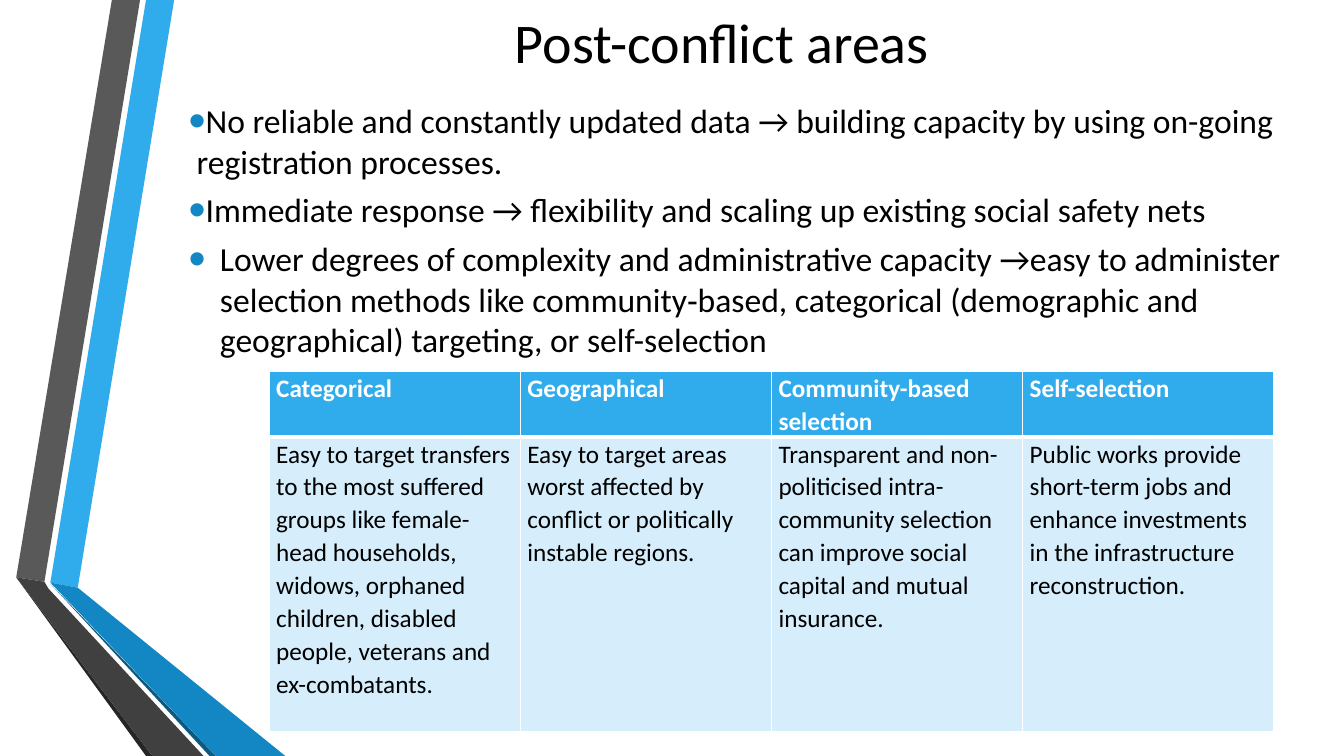
from lxml import etree
from pptx import Presentation
from pptx.dml.color import RGBColor
from pptx.enum.text import MSO_ANCHOR, MSO_AUTO_SIZE, PP_ALIGN
from pptx.oxml.ns import qn
from pptx.util import Cm, Pt

MIDDLE, TOP = MSO_ANCHOR.MIDDLE, MSO_ANCHOR.TOP
NO_AUTOFIT = MSO_AUTO_SIZE.NONE
CENTER = PP_ALIGN.CENTER
FONT = "Calibri"
COLORS = {
    "black": "000000",
    "white": "FFFFFF",
    "sky": "30ACEC",
    "blue": "1287C3",
    "navy": "0C5A82",
    "pale": "D6EEFB",
    "grey": "595959",
    "charcoal": "404040",
    "dark": "262626",
}


def style_text(paragraph, size, color, bold=False):
    for span in paragraph.runs:
        span.font.name = FONT
        span.font.size = Pt(size)
        span.font.bold = bold
        span.font.color.rgb = RGBColor.from_string(COLORS[color])


def add_borders(cell, widths):
    properties = cell._tc.get_or_add_tcPr()
    for position, (side, width) in enumerate(widths.items()):
        line = etree.Element(qn(f"a:{side}"), w=str(Pt(width)))
        fill = etree.SubElement(line, qn("a:solidFill"))
        etree.SubElement(fill, qn("a:srgbClr"), val=COLORS["white"])
        properties.insert(position, line)


deck = Presentation()
deck.slide_width, deck.slide_height = Cm(33.87), Cm(19.05)
page = deck.slides.add_slide(deck.slide_layouts[1])

ribbons = [
    ("sky", [(1.27, 14.68), (1.96, 14.81), (4.39, 0), (3.68, 0)]),
    ("grey", [(3.53, 0), (2.82, 0), (0.41, 14.55), (1.12, 14.66)]),
    ("dark", [(0.41, 14.55), (3.68, 19.05), (3.84, 19.05)]),
    ("navy", [(1.27, 14.71), (5.28, 19.05), (5.44, 19.05)]),
    ("blue", [(1.27, 14.68), (5.44, 19.05), (7.19, 19.05), (1.96, 14.81)]),
    ("charcoal", [(0.41, 14.55), (3.84, 19.05), (5.13, 19.05), (1.22, 14.83), (1.12, 14.66)]),
]
for color, corners in ribbons:
    points = [(Cm(x), Cm(y)) for x, y in corners]
    builder = page.shapes.build_freeform(*points[0])
    builder.add_line_segments(points[1:])
    ribbon = builder.convert_to_shape()
    ribbon.shadow.inherit = False
    ribbon.fill.solid()
    ribbon.fill.fore_color.rgb = RGBColor.from_string(COLORS[color])
    ribbon.line.fill.background()

title = page.shapes.title
title.left, title.top, title.width, title.height = Cm(4.27), Cm(0), Cm(27.84), Cm(2.06)
title.text_frame.text = "Post-conflict areas"
title.text_frame.vertical_anchor = MIDDLE
title.text_frame.auto_size = NO_AUTOFIT
title.text_frame.paragraphs[0].alignment = CENTER
style_text(title.text_frame.paragraphs[0], 40, "black")

points = [
    ("No reliable and constantly updated data → building capacity by using on-going registration processes.", 0.2),
    ("Immediate response → flexibility and scaling up existing social safety nets", 0.2),
    ("Lower degrees of complexity and administrative capacity →easy to administer selection methods like "
     "community‐based, categorical (demographic and geographical) targeting, or self-selection", 0.79),
]
body = page.placeholders[1]
body.left, body.top, body.width, body.height = Cm(4.5), Cm(2.4), Cm(28.78), Cm(6.8)
body.text_frame.text = "\n".join(text for text, _ in points)
body.text_frame.vertical_anchor = TOP
body.text_frame.auto_size = NO_AUTOFIT
for paragraph, (_, margin) in zip(body.text_frame.paragraphs, points):
    paragraph.space_before = Pt(0)
    paragraph.space_after = Pt(6)
    properties = paragraph._p.get_or_add_pPr()
    properties.set("marL", str(Cm(margin)))
    properties.set("indent", str(Cm(-0.79)))
    bullet_color = etree.SubElement(properties, qn("a:buClr"))
    etree.SubElement(bullet_color, qn("a:srgbClr"), val=COLORS["blue"])
    etree.SubElement(properties, qn("a:buSzPct"), val="145000")
    etree.SubElement(properties, qn("a:buFont"), typeface="Arial")
    etree.SubElement(properties, qn("a:buChar"), char="•")
    style_text(paragraph, 24, "black")

methods = [
    ("Categorical",
     "Easy to target transfers to the most suffered groups like female-head households, widows, "
     "orphaned children, disabled people, veterans and ex-combatants."),
    ("Geographical",
     "Easy to target areas worst affected by conflict or politically instable regions."),
    ("Community-based selection",
     "Transparent and non-politicised intra-community selection can improve social capital and "
     "mutual insurance."),
    ("Self-selection",
     "Public works provide short-term jobs and enhance investments in the infrastructure reconstruction."),
]
row_styles = [
    ("sky", "white", True, {"lnL": 1, "lnR": 1, "lnT": 1, "lnB": 3}),
    ("pale", "black", False, {"lnL": 1, "lnR": 1, "lnT": 3, "lnB": 1}),
]
table = page.shapes.add_table(2, 4, Cm(6.78), Cm(9.35), Cm(25.32), Cm(9.05)).table
table.rows[0].height, table.rows[1].height = Cm(1.63), Cm(7.42)
for column, texts in enumerate(methods):
    for row, (fill, color, bold, widths) in enumerate(row_styles):
        cell = table.cell(row, column)
        cell.text_frame.text = texts[row]
        cell.margin_left = cell.margin_right = Cm(0.18)
        cell.margin_top = cell.margin_bottom = Cm(0)
        cell.fill.solid()
        cell.fill.fore_color.rgb = RGBColor.from_string(COLORS[fill])
        add_borders(cell, widths)
        cell.text_frame.paragraphs[0].line_spacing = 1.07
        style_text(cell.text_frame.paragraphs[0], 18, color, bold)

deck.save("out.pptx")
